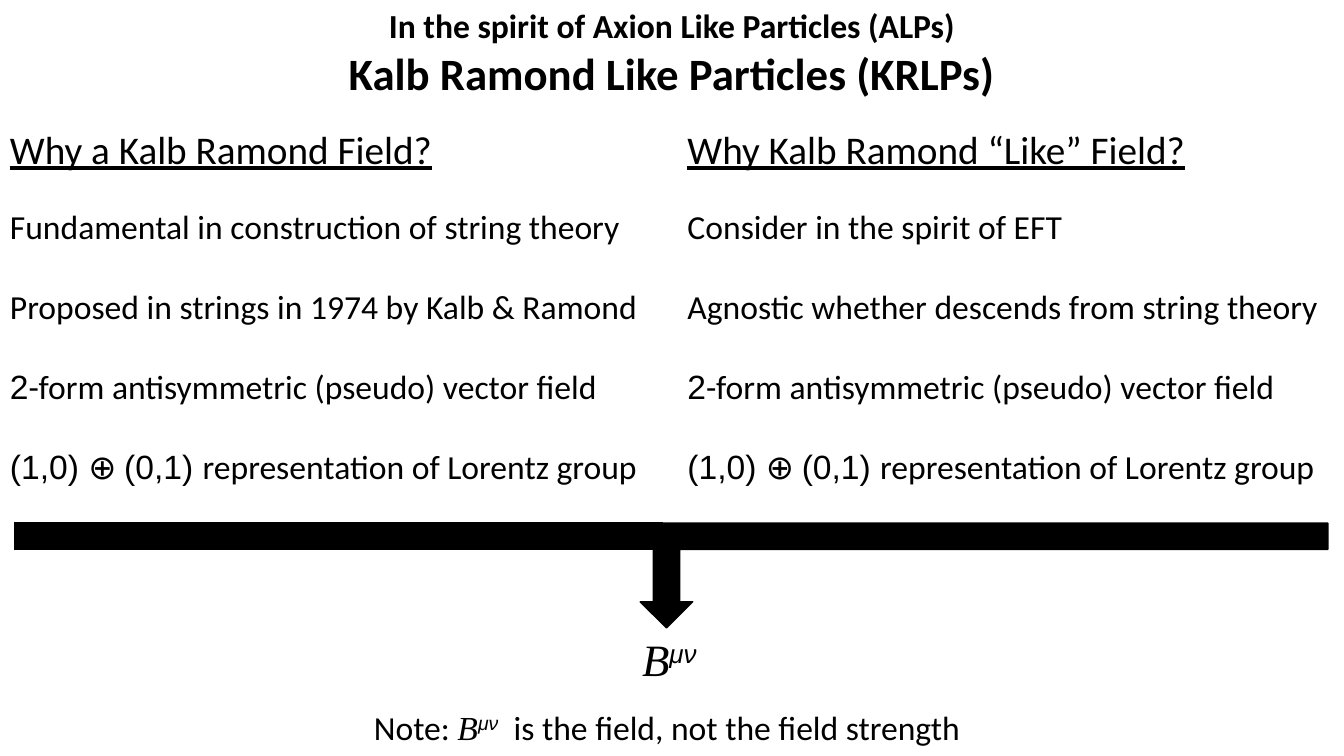
from pptx import Presentation
from pptx.dml.color import RGBColor
from pptx.enum.shapes import MSO_CONNECTOR as Conn, MSO_SHAPE as Shape
from pptx.enum.text import PP_ALIGN as Align
from pptx.util import Pt
from lxml.etree import SubElement

PX = 9144  # 100 px to the inch
BLACK = RGBColor(0, 0, 0)
SANS, ARIAL, SERIF = "Calibri", "Arial", "Times New Roman"

# Text runs are (text, font, style); "sup" is an italic superscript
FIELD = [("B", SERIF, "italic"), ("μν", ARIAL, "sup")]
SHARED = [
    [("2", ARIAL, ""), ("-form antisymmetric (pseudo) vector field", SANS, "")],
    [("(1,0) ", ARIAL, ""), ("⊕ ", SANS, ""), ("(0,1) ", ARIAL, ""),
     ("representation of Lorentz group", SANS, "")],
]
WHY = ["Fundamental in construction of string theory",
       "Proposed in strings in 1974 by Kalb & Ramond"]
LIKE = ["Consider in the spirit of EFT",
        "Agnostic whether descends from string theory"]


def plain(text):
    return [(text, SANS, "")]


def add_text(slide, box, lines, wrap=False, align=Align.LEFT):
    """Fill a text box with lines of (runs, size, gap above, style)."""
    frame = slide.shapes.add_textbox(*(n * PX for n in box)).text_frame
    frame.word_wrap = wrap
    for i, (runs, size, gap, style) in enumerate(lines):
        para = frame.add_paragraph() if i else frame.paragraphs[0]
        para.alignment, para.space_before = align, Pt(gap)
        font = para.font
        font.size, font.color.rgb = Pt(size), BLACK
        font.bold, font.underline = style == "bold", style == "under"
        for text, name, look in runs:
            run = para.add_run()
            run.text, run.font.name = text, name
            run.font.size, run.font.color.rgb = Pt(size), BLACK
            run.font.bold, run.font.underline = font.bold, font.underline
            run.font.italic = look in ("italic", "sup")
            if look == "sup":
                run.font._element.set("baseline", "30000")


def add_title(slide, box):
    add_text(slide, box, [
        (plain("In the spirit of Axion Like Particles (ALPs)"), 24, 0, "bold"),
        (plain("Kalb Ramond Like Particles (KRLPs)"), 32, 0, "bold"),
    ], wrap=True, align=Align.CENTER)


def add_column(slide, box, head, points):
    lines = [(plain(head), 28, 0, "under")]
    for i, runs in enumerate([plain(p) for p in points] + SHARED):
        lines.append((runs, 24, 28.5 if i else 24, ""))
    add_text(slide, box, lines)


def add_bar(slide, box):
    """Bar across both columns, with an arrow down from its middle."""
    left, top, width, height = box
    mid = left + 621
    arrow = slide.shapes.add_shape(
        Shape.BENT_UP_ARROW, mid * PX, top * PX,
        (left + width - mid) * PX, height * PX)
    arrow.rotation = 180
    arrow.shadow.inherit = False
    arrow.fill.solid()
    arrow.fill.fore_color.rgb = arrow.line.color.rgb = BLACK
    arrow.line.width = Pt(1)

    y = (top + height // 8) * PX
    bar = slide.shapes.add_connector(
        Conn.STRAIGHT, left * PX, y, (mid + 23) * PX, y)
    bar.line.color.rgb, bar.line.width = BLACK, Pt(20.25)
    props = bar._element.spPr
    SubElement(props, props.tag.split("}")[0].replace(
        "presentationml", "drawingml").replace("/2006/main", "/2006/main")
        + "}effectLst")


def add_result(slide, box):
    left, top, width, height = box
    add_text(slide, (left + 266, top, 80, 64), [(FIELD, 32, 0, "")])
    note = plain("Note: ") + FIELD + plain("  is the field, not the field strength")
    add_text(slide, (left, top + height - 50, width, 50), [(note, 24, 0, "")])


def main():
    deck = Presentation()
    deck.slide_width, deck.slide_height = 1333 * PX, 750 * PX
    slide = deck.slides.add_slide(deck.slide_layouts[6])
    add_title(slide, (0, 0, 1333, 104))
    add_column(slide, (0, 119, 642, 374), "Why a Kalb Ramond Field?", WHY)
    add_column(slide, (672, 119, 651, 374), "Why Kalb Ramond “Like” Field?", LIKE)
    add_result(slide, (361, 622, 624, 124))
    add_bar(slide, (14, 519, 1303, 104))
    deck.save("out.pptx")


if __name__ == "__main__":
    main()
